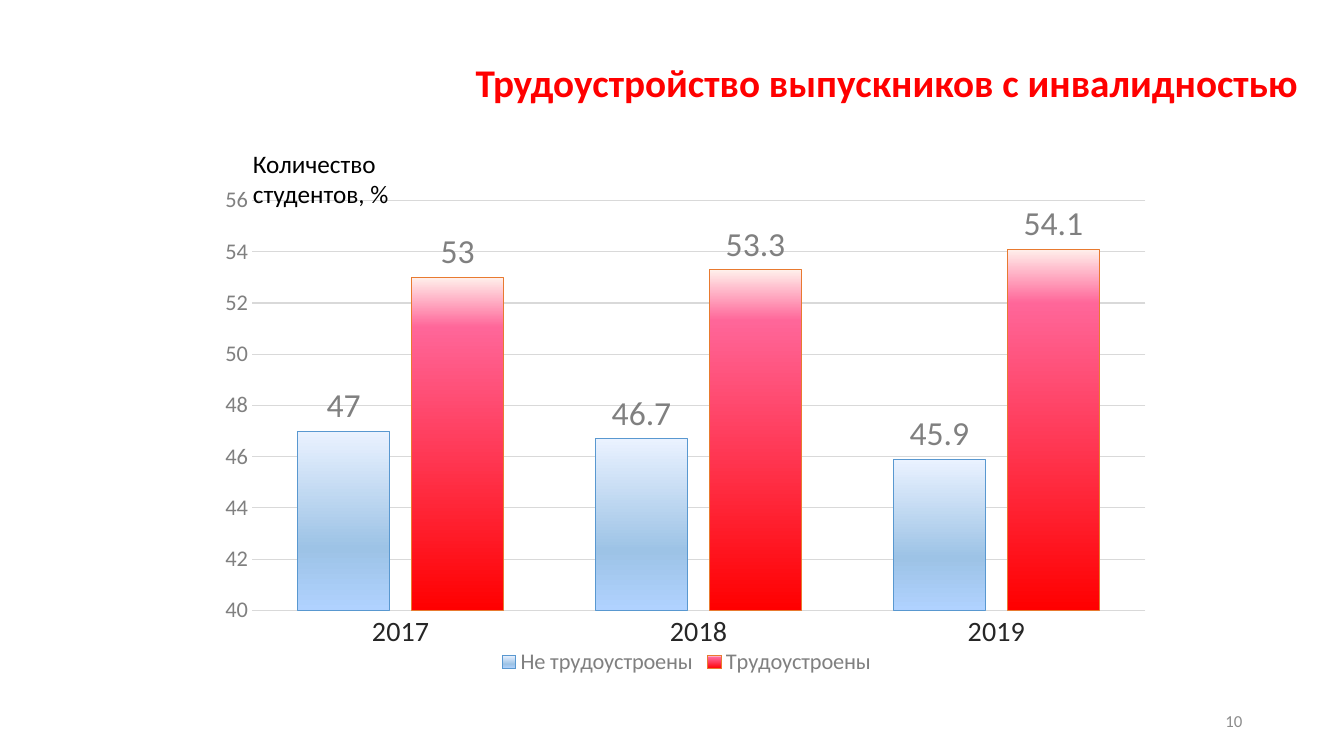
from copy import deepcopy
from dataclasses import dataclass, field
from typing import Any

from lxml.etree import SubElement
from pptx import Presentation
from pptx.chart.data import CategoryChartData
from pptx.dml.color import RGBColor
from pptx.enum.chart import XL_CHART_TYPE as ChartType
from pptx.enum.chart import XL_LABEL_POSITION as LabelPosition
from pptx.enum.chart import XL_LEGEND_POSITION as LegendPosition
from pptx.enum.chart import XL_TICK_MARK as TickMark
from pptx.enum.text import MSO_ANCHOR as Anchor
from pptx.enum.text import PP_ALIGN as Align
from pptx.oxml.ns import qn
from pptx.util import Inches, Pt

WIDTH, HEIGHT = Inches(13.33), Inches(7.5)
FONT = "Calibri"
GREY, GRID = "808080", "D9D9D9"
YEARS = ("2017", "2018", "2019")


@dataclass(frozen=True)
class Area:
    """Place on the slide, in percent of its width and height."""
    left: float
    top: float
    width: float
    height: float

    def lengths(self) -> tuple[int, ...]:
        sides = (WIDTH, HEIGHT, WIDTH, HEIGHT)
        shares = (self.left, self.top, self.width, self.height)
        return tuple(round(side * share / 100) for side, share in zip(sides, shares))


@dataclass(frozen=True)
class Caption:
    text: str
    area: Area
    size: float
    color: str
    bold: bool = False
    anchor: Anchor = Anchor.TOP
    paragraph: dict[str, Any] = field(default_factory=dict)


@dataclass(frozen=True)
class Group:
    """One series of bars; the gradient runs from the bottom up."""
    name: str
    shares: tuple[float, ...]
    gradient: tuple[tuple[float, str], ...]
    outline: str


CHART_AREA = Area(15.3, 23.6, 71.57, 66.4)
PLOT_LAYOUT = {"layoutTarget": "inner", "xMode": "edge", "yMode": "edge",
               "x": 0.048, "y": 0.044, "w": 0.929, "h": 0.817}

CAPTIONS = (
    Caption("Трудоустройство выпускников с инвалидностью",
            Area(34.66, 4.4, 65.34, 13.73), 28, "FF0000", True, Anchor.MIDDLE,
            {"line_spacing": 0.9}),
    Caption("Количество студентов, %", Area(18.08, 18.93, 19.05, 9.47), 18, "000000"),
    Caption("10", Area(70.67, 92.67, 22.5, 5.33), 12, "8C8C8C",
            anchor=Anchor.MIDDLE, paragraph={"alignment": Align.RIGHT}),
)

GROUPS = (
    Group("Не трудоустроены", (47, 46.7, 45.9),
          ((0, "B0D2FF"), (0.35, "9DC3E6"), (1, "EAF2FF")), "5998D0"),
    Group("Трудоустроены", (53, 53.3, 54.1),
          ((0, "FF0000"), (0.85, "FF6699"), (1, "FFF0EB")), "E87A30"),
)


def rgb(color: str) -> RGBColor:
    return RGBColor.from_string(color)


def apply(target: Any, values: dict[str, Any]) -> None:
    for name, value in values.items():
        setattr(target, name, value)


def style_font(font: Any, size: float, color: str, bold: bool = False) -> None:
    apply(font, {"name": FONT, "size": Pt(size), "bold": bold})
    font.color.rgb = rgb(color)


def style_line(line: Any, color: str) -> None:
    line.color.rgb = rgb(color)
    line.width = Pt(0.75)


def add_caption(slide: Any, caption: Caption) -> None:
    frame = slide.shapes.add_textbox(*caption.area.lengths()).text_frame
    apply(frame, {"word_wrap": True, "vertical_anchor": caption.anchor})
    paragraph = frame.paragraphs[0]
    apply(paragraph, caption.paragraph)
    run = paragraph.add_run()
    run.text = caption.text
    style_font(run.font, caption.size, caption.color, caption.bold)


def style_bars(bars: Any, group: Group) -> None:
    fill = bars.format.fill
    fill.gradient()
    fill.gradient_angle = 90
    stop_list = bars._element.find(".//" + qn("a:gsLst"))
    stop_list.append(deepcopy(stop_list[0]))
    for stop, (position, color) in zip(fill.gradient_stops, group.gradient):
        stop.position = position
        stop.color.rgb = rgb(color)
    style_line(bars.format.line, group.outline)
    bars.invert_if_negative = False
    labels = bars.data_labels
    apply(labels, {"show_value": True, "position": LabelPosition.OUTSIDE_END})
    style_font(labels.font, 24, GREY)


def style_axes(chart: Any) -> None:
    years, percents = chart.category_axis, chart.value_axis
    ticks = {"major_tick_mark": TickMark.NONE, "minor_tick_mark": TickMark.NONE}
    for axis, size, color in ((years, 20, "262626"), (percents, 16, GREY)):
        apply(axis, ticks)
        style_font(axis.tick_labels.font, size, color)
    style_line(years.format.line, GRID)
    apply(percents, {"minimum_scale": 40, "maximum_scale": 56, "major_unit": 2,
                     "has_major_gridlines": True})
    percents.format.line.fill.background()
    style_line(percents.major_gridlines.format.line, GRID)


def place_plot(chart: Any) -> None:
    plot_area = chart._chartSpace.chart.plotArea
    for old in plot_area.findall(qn("c:layout")):
        plot_area.remove(old)
    layout = plot_area.makeelement(qn("c:layout"))
    plot_area.insert(0, layout)
    manual = SubElement(layout, qn("c:manualLayout"))
    for name, value in PLOT_LAYOUT.items():
        SubElement(manual, qn(f"c:{name}")).set("val", str(value))


def add_employment_chart(slide: Any) -> None:
    data = CategoryChartData()
    data.categories = YEARS
    for group in GROUPS:
        data.add_series(group.name, group.shares)
    chart = slide.shapes.add_chart(
        ChartType.COLUMN_CLUSTERED, *CHART_AREA.lengths(), data).chart
    apply(chart, {"has_title": False, "has_legend": True})
    style_font(chart.font, 10, "000000")
    apply(chart.legend, {"position": LegendPosition.BOTTOM, "include_in_layout": False})
    style_font(chart.legend.font, 16, GREY)
    plot = chart.plots[0]
    apply(plot, {"gap_width": 100, "overlap": -24, "vary_by_categories": False})
    for bars, group in zip(plot.series, GROUPS):
        style_bars(bars, group)
    style_axes(chart)
    place_plot(chart)


def main() -> None:
    deck = Presentation()
    apply(deck, {"slide_width": WIDTH, "slide_height": HEIGHT})
    slide = deck.slides.add_slide(deck.slide_layouts[6])
    add_employment_chart(slide)
    for caption in CAPTIONS:
        add_caption(slide, caption)
    deck.save("out.pptx")


if __name__ == "__main__":
    main()
